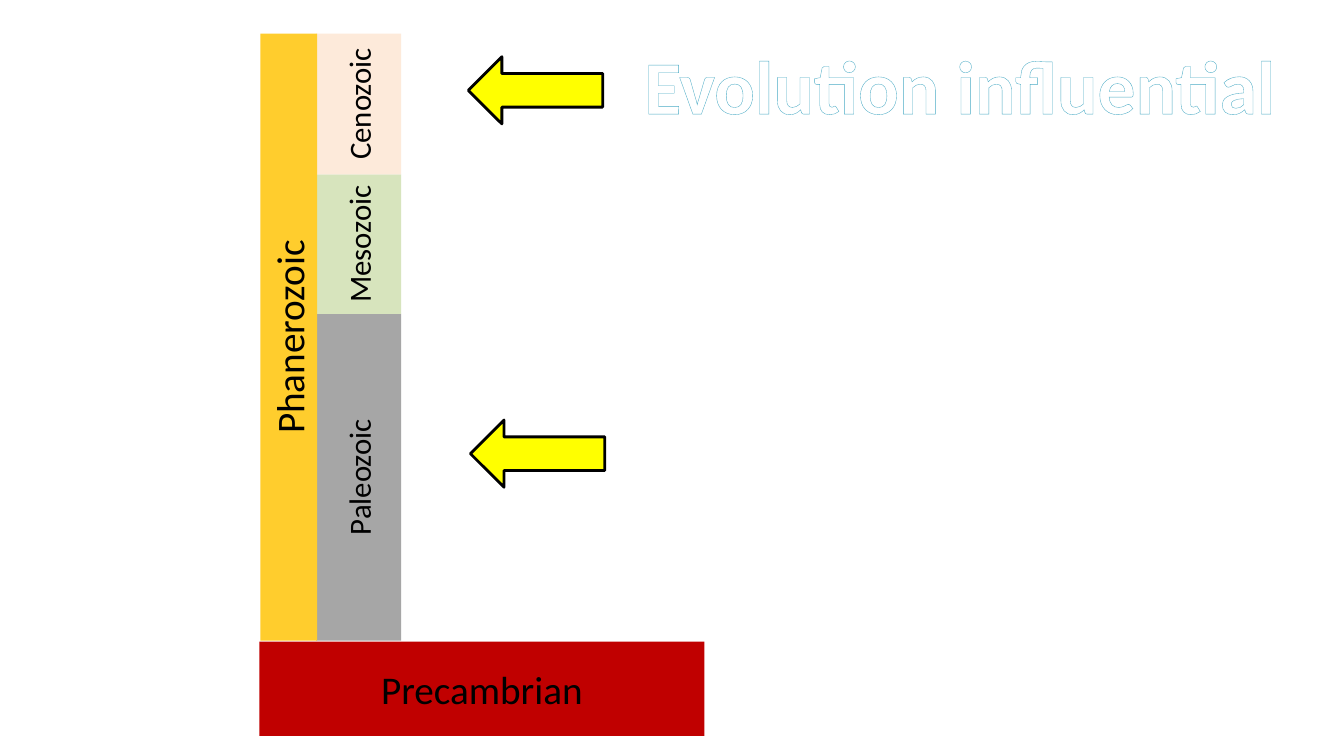
from dataclasses import dataclass

from lxml.etree import SubElement
from pptx import Presentation
from pptx.dml.color import RGBColor as RGB
from pptx.enum.shapes import MSO_SHAPE as SHAPE
from pptx.enum.text import MSO_ANCHOR as ANCHOR, MSO_AUTO_SIZE as AUTO, PP_ALIGN as ALIGN
from pptx.oxml.ns import qn
from pptx.util import Emu, Pt

PX = 9525


@dataclass(frozen=True)
class Theme:
    font: str = "Calibri"
    ink: str = "000000"
    title_fill: str = "FFFFFF"
    title_line: str = "4BACC6"
    precambrian: str = "C00000"
    phanerozoic: str = "FFCD2D"
    paleozoic: str = "A6A6A6"
    mesozoic: str = "D7E4BD"
    cenozoic: str = "FDEADA"
    arrow: str = "FFFF00"
    title_pt: int = 54
    eon_pt: int = 28
    era_pt: int = 22


THEME = Theme()


def px(n):
    return Emu(round(n * PX))


def write(sp, text, size, color=THEME.ink, bold=False, outline=None, wrap=True):
    tf = sp.text_frame
    tf.word_wrap = wrap
    p = tf.paragraphs[0]
    p.alignment = ALIGN.CENTER
    r = p.add_run()
    r.text = text
    r.font.name = THEME.font
    r.font.size = Pt(size)
    r.font.bold = bold
    r.font.color.rgb = RGB.from_string(color)
    if outline:
        rpr = r.font._element
        ln = SubElement(rpr, qn("a:ln"), w=str(Pt(0.8)))
        SubElement(SubElement(ln, qn("a:solidFill")), qn("a:srgbClr"), val=outline)
        rpr.insert(0, ln)


def add_shape(slide, kind, x, y, w, h, fill):
    sp = slide.shapes.add_shape(kind, px(x), px(y), px(w), px(h))
    sp.shadow.inherit = False
    sp.fill.solid()
    sp.fill.fore_color.rgb = RGB.from_string(fill)
    sp.line.fill.background()
    return sp


def add_block(slide, text, x, y, w, h, fill, size, upright=False):
    if upright:
        x, y, w, h = x + (w - h) / 2, y + (h - w) / 2, h, w
    sp = add_shape(slide, SHAPE.RECTANGLE, x, y, w, h, fill)
    sp.rotation = 270 if upright else 0
    sp.text_frame.vertical_anchor = ANCHOR.MIDDLE
    write(sp, text, size)


def add_arrow(slide, x, y):
    sp = add_shape(slide, SHAPE.RIGHT_ARROW, x, y, 128, 64, THEME.arrow)
    sp.rotation = 180
    sp.line.color.rgb = RGB.from_string(THEME.ink)
    sp.line.width = Pt(2)


def add_title(slide, text, x, y, w, h):
    sp = slide.shapes.add_textbox(px(x), px(y), px(w), px(h))
    sp.text_frame.auto_size = AUTO.SHAPE_TO_FIT_TEXT
    write(sp, text, THEME.title_pt, color=THEME.title_fill, bold=True,
          outline=THEME.title_line, wrap=False)


def main():
    prs = Presentation()
    prs.slide_width, prs.slide_height = px(1280), px(720)
    slide = prs.slides.add_slide(prs.slide_layouts[6])

    column_top, column_bottom = 32, 610
    add_block(slide, "Precambrian", 247, 611, 424, 90, THEME.precambrian, THEME.eon_pt)
    y = column_bottom
    for era, h, fill in (
        ("Paleozoic", 311, THEME.paleozoic),
        ("Mesozoic", 133, THEME.mesozoic),
        ("Cenozoic", 134, THEME.cenozoic),
    ):
        y -= h
        add_block(slide, era, 301, y, 81, h, fill, THEME.era_pt, upright=True)
    add_block(slide, "Phanerozoic", 248, column_top, 54, column_bottom - column_top,
              THEME.phanerozoic, THEME.eon_pt, upright=True)

    for x, y in ((448, 400), (446, 54)):
        add_arrow(slide, x, y)
    add_title(slide, "Evolution influential", 600, 32, 629, 97)

    prs.save("out.pptx")


if __name__ == "__main__":
    main()
